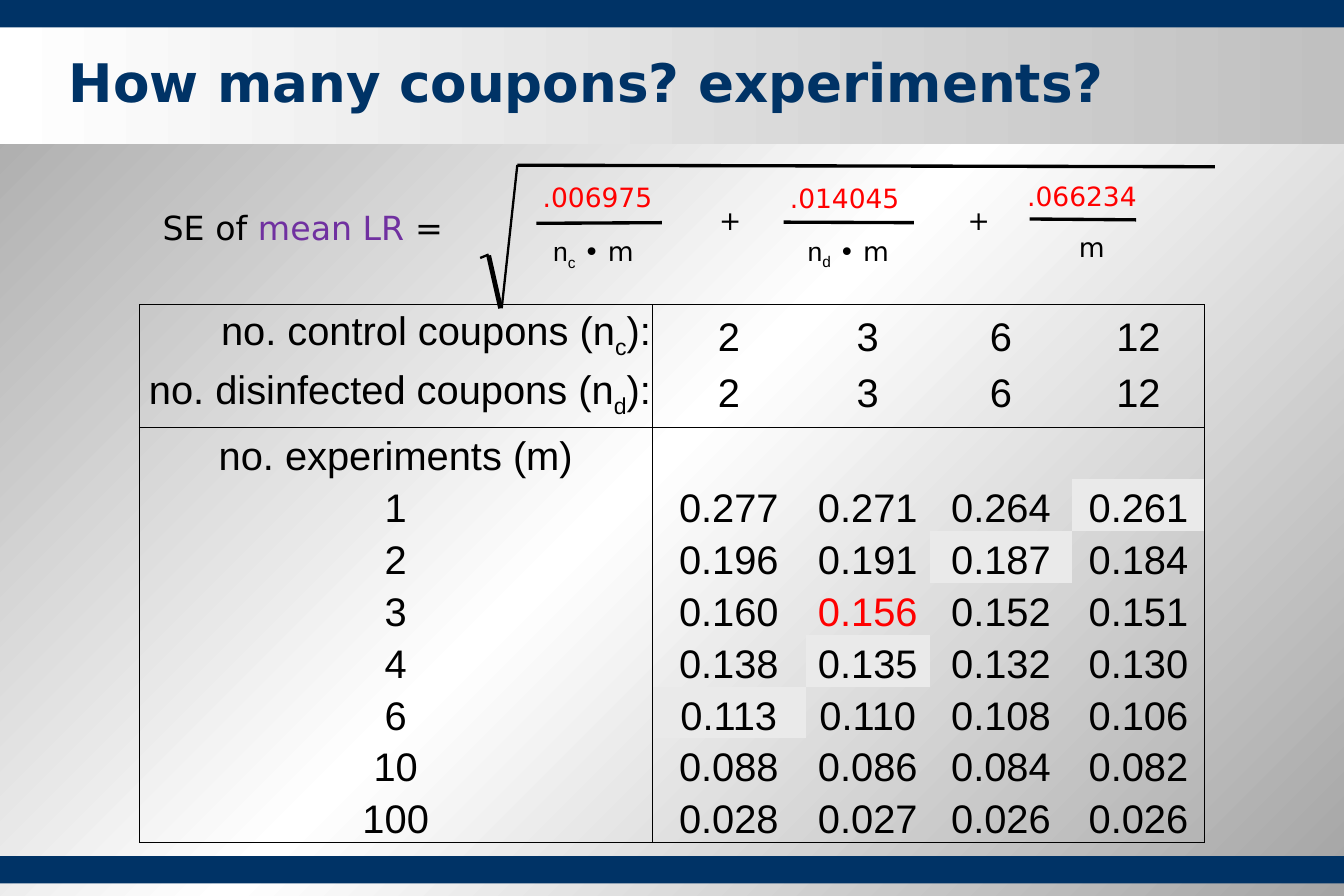
import copy
import pptx
import pptx.util
import pptx.dml.color
import pptx.enum.shapes
import pptx.enum.text
import pptx.oxml
import pptx.oxml.ns

Pt = pptx.util.Pt
RGBColor = pptx.dml.color.RGBColor
PP_ALIGN = pptx.enum.text.PP_ALIGN
MSO_ANCHOR = pptx.enum.text.MSO_ANCHOR
qn = pptx.oxml.ns.qn

NAVY = RGBColor(0x00, 0x33, 0x66)
BLACK = RGBColor(0x00, 0x00, 0x00)
WHITE = RGBColor(0xFF, 0xFF, 0xFF)
RED = RGBColor(0xFF, 0x00, 0x00)
PURPLE = RGBColor(0x70, 0x30, 0xA0)
GREY = RGBColor(0xA4, 0xA4, 0xA4)
SILVER = RGBColor(0xC0, 0xC0, 0xC0)
PALE = RGBColor(0xEA, 0xEA, 0xEA)
SANS = "DejaVu Sans"
ARIAL = "Arial"
NO_STYLE = "{2D5ABB26-0587-4C30-8999-92F81FD0307C}"


def add_run(p, text, size, font=SANS, color=BLACK, bold=False, sub=False):
    r = p.add_run()
    r.text = text
    for name, value in {"size": Pt(size), "name": font, "bold": bold}.items():
        setattr(r.font, name, value)
    r.font.color.rgb = color
    if sub:
        r._r.get_or_add_rPr().set("baseline", "-25000")


def add_label(left, top, width, height, runs, inset=(0, 0)):
    tf = s.shapes.add_textbox(Pt(left), Pt(top), Pt(width), Pt(height)).text_frame
    margins = {
        "margin_left": Pt(inset[0]), "margin_right": Pt(inset[0]),
        "margin_top": Pt(inset[1]), "margin_bottom": Pt(inset[1]),
        "word_wrap": True,
    }
    for name, value in margins.items():
        setattr(tf, name, value)
    for run in runs:
        add_run(tf.paragraphs[0], **run)


prs = pptx.Presentation()
prs.slide_width = Pt(810)
prs.slide_height = Pt(540)
s = prs.slides.add_slide(prs.slide_layouts[5])

fill = s.background.fill
fill.gradient()
stop_list = s.element.find(".//" + qn("a:gsLst"))
stop_list.append(copy.deepcopy(stop_list[0]))
for stop, color, position in zip(fill.gradient_stops, (GREY, WHITE, GREY), (0, 0.5, 1)):
    stop.color.rgb = color
    stop.position = position
fill.gradient_angle = 315

bars = []
for top, height in ((516, 16.5), (15, 72), (0, 16.5)):
    sp = s.shapes.add_shape(pptx.enum.shapes.MSO_SHAPE.RECTANGLE, 0, Pt(top), Pt(810), Pt(height))
    sp.shadow.inherit = False
    sp.fill.solid()
    sp.fill.fore_color.rgb = NAVY
    sp.line.fill.background()
    bars.append(sp)
bottom_bar, title_band, top_bar = bars

fill = title_band.fill
fill.gradient()
for stop, color, position in zip(fill.gradient_stops, (WHITE, SILVER), (0, 1)):
    stop.color.rgb = color
    stop.position = position
fill.gradient_angle = 0

title = s.shapes.title
title.left, title.top, title.width, title.height = Pt(34.2), Pt(26), Pt(745), Pt(46)
tf = title.text_frame
tf.auto_size = pptx.enum.text.MSO_AUTO_SIZE.NONE
tf.vertical_anchor = MSO_ANCHOR.MIDDLE
p = tf.paragraphs[0]
p.alignment = PP_ALIGN.LEFT
add_run(p, "How many coupons? experiments?", 32, color=NAVY, bold=True)
title_band._element.addnext(title._element)

rows = [
    (("no. control coupons (n", "c", "):"), "2", "3", "6", "12"),
    (("no. disinfected coupons (n", "d", "):"), "2", "3", "6", "12"),
    ("no. experiments (m)", "", "", "", ""),
    ("1", "0.277", "0.271", "0.264", "0.261"),
    ("2", "0.196", "0.191", "0.187", "0.184"),
    ("3", "0.160", "0.156", "0.152", "0.151"),
    ("4", "0.138", "0.135", "0.132", "0.130"),
    ("6", "0.113", "0.110", "0.108", "0.106"),
    ("10", "0.088", "0.086", "0.084", "0.082"),
    ("100", "0.028", "0.027", "0.026", "0.026"),
]
col_widths = (309, 92.6, 74.9, 85.7, 80)
row_heights = [33.4, 40.3] + [31.3] * 8
highlighted = {(3, 4), (4, 3), (6, 2), (7, 1)}
frame = s.shapes.add_table(10, 5, Pt(84), Pt(183.6), Pt(sum(col_widths)), Pt(sum(row_heights)))
table = frame.table
table.first_row = table.horz_banding = False
frame._element.find(".//" + qn("a:tableStyleId")).text = NO_STYLE
for column, width in zip(table.columns, col_widths):
    column.width = Pt(width)
for row, height in zip(table.rows, row_heights):
    row.height = Pt(height)

for i, row in enumerate(rows):
    for j, value in enumerate(row):
        cell = table.cell(i, j)
        cell_format = {
            "margin_left": Pt(0.7), "margin_right": Pt(0.7),
            "margin_top": Pt(0.7), "margin_bottom": 0,
            "vertical_anchor": MSO_ANCHOR.MIDDLE if i == 1 else MSO_ANCHOR.BOTTOM,
        }
        for name, setting in cell_format.items():
            setattr(cell, name, setting)
        sides = {"lnL": j in (0, 1), "lnR": j in (0, 4), "lnT": i in (0, 2), "lnB": i in (1, 9)}
        for side, drawn in sides.items():
            paint = f'<a:solidFill><a:srgbClr val="{BLACK}"/></a:solidFill>' if drawn else "<a:noFill/>"
            cell._tc.get_or_add_tcPr().append(pptx.oxml.parse_xml(
                f'<a:{side} {pptx.oxml.ns.nsdecls("a")} w="{Pt(0.5)}">{paint}</a:{side}>'))
        if (i, j) in highlighted:
            cell.fill.solid()
            cell.fill.fore_color.rgb = PALE
        else:
            cell.fill.background()
        p = cell.text_frame.paragraphs[0]
        p.alignment = PP_ALIGN.RIGHT if i < 2 and j == 0 else PP_ALIGN.CENTER
        color = RED if (i, j) == (5, 2) else BLACK
        parts = value if isinstance(value, tuple) else (value,)
        for k, text in enumerate(parts):
            if text:
                add_run(p, text, 24, ARIAL, color, sub=k == 1)

lines = [
    (289.4, 155.5, 294.5, 153.4, 1.38),
    (294.5, 154, 301.7, 185.8, 2.88),
    (302.4, 185.8, 311.8, 99.4, 1.38),
    (311.8, 99.6, 732.2, 100.5, 2),
    (323.3, 134.6, 398.9, 134.2, 2),
    (472.3, 133.9, 550.8, 134.2, 2),
    (620.6, 132, 684.7, 132.5, 2),
]
for x1, y1, x2, y2, width in lines:
    line = s.shapes.add_connector(
        pptx.enum.shapes.MSO_CONNECTOR.STRAIGHT, Pt(x1), Pt(y1), Pt(x2), Pt(y2))
    line.line.color.rgb = BLACK
    line.line.width = Pt(width)
    line._element.spPr.append(pptx.oxml.parse_xml(f'<a:effectLst {pptx.oxml.ns.nsdecls("a")}/>'))

for left, top, text in ((320, 105.8, ".006975"), (469, 106.1, ".014045"), (612, 105.1, ".066234")):
    add_label(left, top, 121, 26.6, [dict(text=text, size=16, color=RED)], (7.2, 3.6))
for left, top, letter in ((333.4, 141.8, "c"), (486.7, 141.4, "d")):
    add_label(left, top, 54, 19.4, [
        dict(text="n", size=16, font=ARIAL),
        dict(text=letter, size=16, font=ARIAL, sub=True),
        dict(text=" • m", size=16),
    ])
for left, top, text in ((650.2, 139.4, "m"), (433.4, 123.1, "+"), (583.2, 122.8, "+")):
    add_label(left, top, 16, 19.4, [dict(text=text, size=16)])
add_label(91, 121.4, 187.2, 31.7, [
    dict(text="SE of ", size=20),
    dict(text="mean LR ", size=20, color=PURPLE),
    dict(text="=", size=20),
], (7.2, 3.6))

prs.save("out.pptx")
